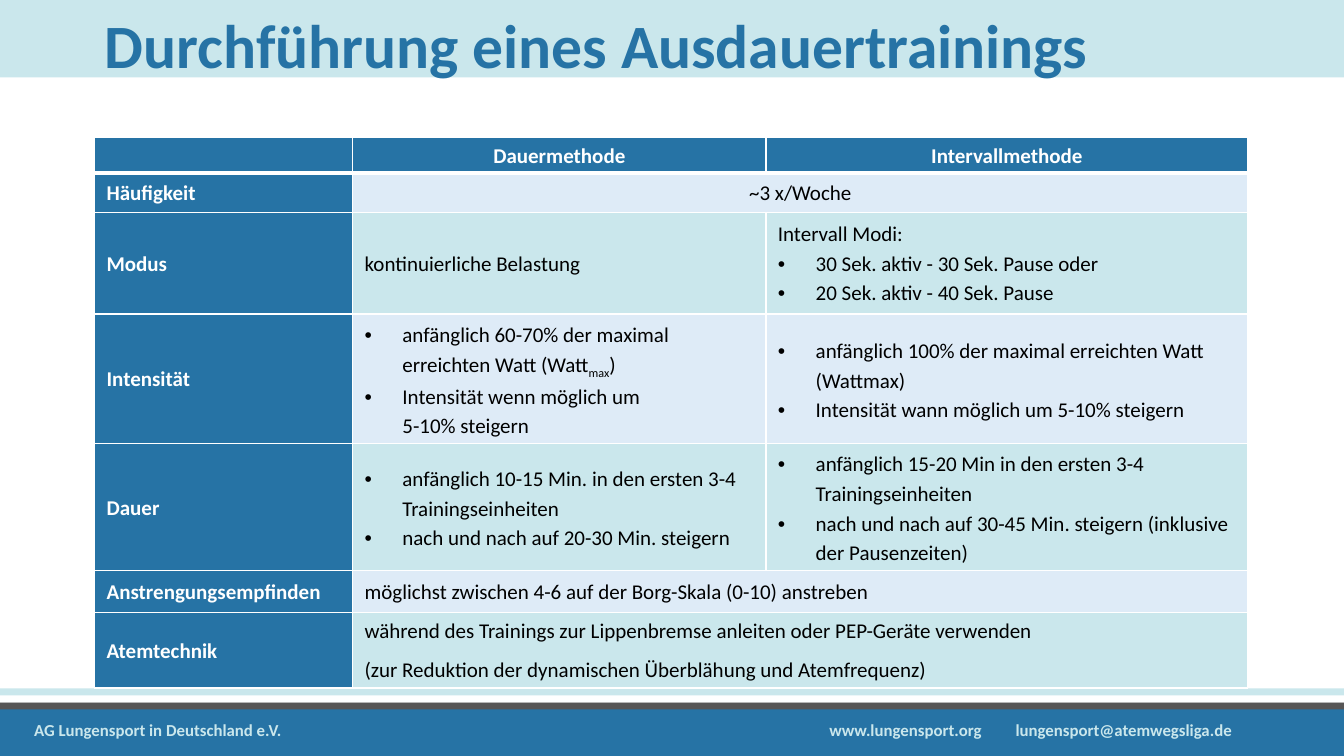
from dataclasses import dataclass

from lxml import etree
from pptx import Presentation
from pptx.dml.color import RGBColor
from pptx.enum.shapes import MSO_SHAPE
from pptx.enum.text import MSO_ANCHOR, MSO_AUTO_SIZE, PP_ALIGN
from pptx.oxml.ns import qn
from pptx.util import Pt

RECT = MSO_SHAPE.RECTANGLE
MIDDLE = MSO_ANCHOR.MIDDLE
NO_FIT = MSO_AUTO_SIZE.NONE
LEFT, CENTER = PP_ALIGN.LEFT, PP_ALIGN.CENTER

BLUE, CYAN, PALE = "2673A5", "CAE7EC", "DEEBF7"
GREY, WHITE, BLACK = "575656", "FFFFFF", "000000"
FONT = "Calibri"
CELL_SIZE = 15
INDENT = 27
BREAK = "\n"
SUB = "_"


@dataclass
class Band:
    top: float
    height: float
    color: str


@dataclass
class Para:
    runs: tuple[str, ...]
    bullet: bool = False
    after: float = 8
    align: PP_ALIGN = LEFT


@dataclass
class Row:
    height: float
    label: str
    fill: str
    cells: list[list[Para]]


def rgb(color: str) -> RGBColor:
    return RGBColor.from_string(color)


def apply(target, values: dict) -> None:
    for name, value in values.items():
        setattr(target, name, value)


def style(font, size: float, color: str, bold: bool) -> None:
    apply(font, {"name": FONT, "size": Pt(size), "bold": bold})
    font.color.rgb = rgb(color)


def plain(*texts: str, after: float = 8, align: PP_ALIGN = LEFT) -> list[Para]:
    return [Para((t,), after=after, align=align) for t in texts]


def bullets(*items: tuple[str, ...], after: float = 10) -> list[Para]:
    last = len(items) - 1
    return [Para(runs, True, after if i == last else 0) for i, runs in enumerate(items)]


def draw_band(s, band: Band) -> None:
    shape = s.shapes.add_shape(RECT, 0, Pt(band.top), prs.slide_width, Pt(band.height))
    shape.shadow.inherit = False
    shape.fill.solid()
    shape.fill.fore_color.rgb = rgb(band.color)
    shape.line.fill.background()


def draw_para(p, para: Para, color: str, bold: bool) -> None:
    if para.bullet:
        pPr = p._p.get_or_add_pPr()
        pPr.set("marL", str(Pt(INDENT)))
        pPr.set("indent", str(-Pt(INDENT)))
        etree.SubElement(pPr, qn("a:buFont")).set("typeface", "Arial")
        etree.SubElement(pPr, qn("a:buChar")).set("char", "•")
    apply(p, {
        "alignment": para.align,
        "line_spacing": 1.15 if para.bullet else 1.07,
        "space_before": Pt(0),
        "space_after": Pt(para.after),
    })
    for text in para.runs:
        if text == BREAK:
            p.add_line_break()
            continue
        r = p.add_run()
        r.text = text.removeprefix(SUB)
        style(r.font, CELL_SIZE, color, bold)
        if text.startswith(SUB):
            r._r.get_or_add_rPr().set("baseline", "-25000")
    if not para.runs:
        p._p.get_or_add_endParaRPr().set("sz", str(CELL_SIZE * 100))


def draw_borders(cell, top: float, bottom: float) -> None:
    tcPr = cell._tc.get_or_add_tcPr()
    for side, width in {"L": 1, "R": 1, "T": top, "B": bottom}.items():
        ln = etree.SubElement(tcPr, qn(f"a:ln{side}"), w=str(Pt(width)))
        fill = etree.SubElement(ln, qn("a:solidFill"))
        etree.SubElement(fill, qn("a:srgbClr"), val=WHITE)


def draw_cell(cell, paras: list[Para], fill: str, color: str, bold: bool) -> None:
    apply(cell, {
        "margin_left": Pt(8.5), "margin_right": Pt(8.5),
        "margin_top": Pt(3), "margin_bottom": Pt(3),
        "vertical_anchor": MIDDLE,
    })
    cell.fill.solid()
    cell.fill.fore_color.rgb = rgb(fill)
    tf = cell.text_frame
    for i, para in enumerate(paras):
        p = tf.add_paragraph() if i else tf.paragraphs[0]
        draw_para(p, para, color, bold)


def draw_table(s, rows: list[Row], widths: list[float]) -> None:
    frame = s.shapes.add_table(
        len(rows), len(widths), Pt(67.7), Pt(98), Pt(sum(widths)), Pt(383))
    table = frame.table
    for column, width in zip(table.columns, widths):
        column.width = Pt(width)
    for i, row in enumerate(rows):
        table.rows[i].height = Pt(row.height)
        cells = list(table.rows[i].cells)
        for cell in cells:
            draw_borders(cell, 3 if i == 1 else 1, 3 if i == 0 else 1)
        if len(row.cells) == 1:
            cells[1].merge(cells[2])
        label = plain(row.label) if row.label else [Para(())]
        draw_cell(cells[0], label, BLUE, WHITE, True)
        for cell, paras in zip(cells[1:], row.cells):
            draw_cell(cell, paras, row.fill, BLACK if i else WHITE, i == 0)


def draw_footer(s, parts: list[str], stops: list[float]) -> None:
    box = s.shapes.add_textbox(Pt(17.3), Pt(510.5), Pt(923), Pt(28.8))
    tf = box.text_frame
    tf.word_wrap = True
    p = tf.paragraphs[0]
    tabs = etree.SubElement(p._p.get_or_add_pPr(), qn("a:tabLst"))
    for stop in stops:
        etree.SubElement(tabs, qn("a:tab"), pos=str(Pt(stop)), algn="l")
    r = p.add_run()
    r.text = "\t".join(parts)
    style(r.font, 12, CYAN, True)


def draw_title(s, text: str) -> None:
    title = s.shapes.title
    s.shapes._spTree.append(title._element)
    apply(title, {"left": Pt(67.7), "top": Pt(0), "width": Pt(754.5), "height": Pt(69)})
    tf = title.text_frame
    apply(tf, {"auto_size": NO_FIT, "word_wrap": True, "vertical_anchor": MIDDLE})
    p = tf.paragraphs[0]
    apply(p, {"alignment": LEFT, "line_spacing": 0.9, "space_before": Pt(0)})
    r = p.add_run()
    r.text = text
    style(r.font, 44, BLUE, True)


BANDS = [Band(505.5, 34.5, BLUE)]
BANDS += [Band(501.8 - 5 * i, 5, c) for i, c in enumerate((GREY, WHITE, CYAN))]
BANDS.append(Band(0, 55.4, CYAN))

ROWS = [
    Row(24, "", BLUE, [plain("Dauermethode", align=CENTER),
                       plain("Intervallmethode", align=CENTER)]),
    Row(28, "Häufigkeit", PALE, [plain("~3 x/Woche", align=CENTER)]),
    Row(72.7, "Modus", CYAN, [
        plain("kontinuierliche Belastung"),
        plain("Intervall Modi:", after=0) + bullets(
            ("30 Sek. aktiv - 30 Sek. Pause oder",), ("20 Sek. aktiv - 40 Sek. Pause",))]),
    Row(82, "Intensität", PALE, [
        bullets(("anfänglich 60-70% der maximal erreichten Watt (Watt", SUB + "max", ")"),
                ("Intensität wenn möglich um ", BREAK, "5-10% steigern"), after=0),
        bullets(("anfänglich 100% der maximal erreichten Watt (Wattmax)",),
                ("Intensität wann möglich um 5-10% steigern",))]),
    Row(82, "Dauer", CYAN, [
        bullets(("anfänglich 10-15 Min. in den ersten 3-4 Trainingseinheiten",),
                ("nach und nach auf 20-30 Min. steigern",), after=0),
        bullets(("anfänglich 15-20 Min in den ersten 3-4 Trainingseinheiten",),
                ("nach und nach auf 30-45 Min. steigern (inklusive der Pausenzeiten)",))]),
    Row(30, "Anstrengungsempfinden", PALE, [
        plain("möglichst zwischen 4-6 auf der Borg-Skala (0-10) anstreben")]),
    Row(54, "Atemtechnik", CYAN, [
        plain("während des Trainings zur Lippenbremse anleiten oder PEP-Geräte verwenden",
              "(zur Reduktion der dynamischen Überblähung und Atemfrequenz)")]),
]

prs = Presentation()
apply(prs, {"slide_width": Pt(960), "slide_height": Pt(540)})
s = prs.slides.add_slide(prs.slide_layouts[5])
for band in BANDS:
    draw_band(s, band)
draw_footer(s, ["AG Lungensport in Deutschland e.V.", "www.lungensport.org",
                "lungensport@atemwegsliga.de"], [568, 701])
draw_title(s, "Durchführung eines Ausdauertrainings")
draw_table(s, ROWS, [184.3, 295.2, 344.2])
prs.save("out.pptx")
